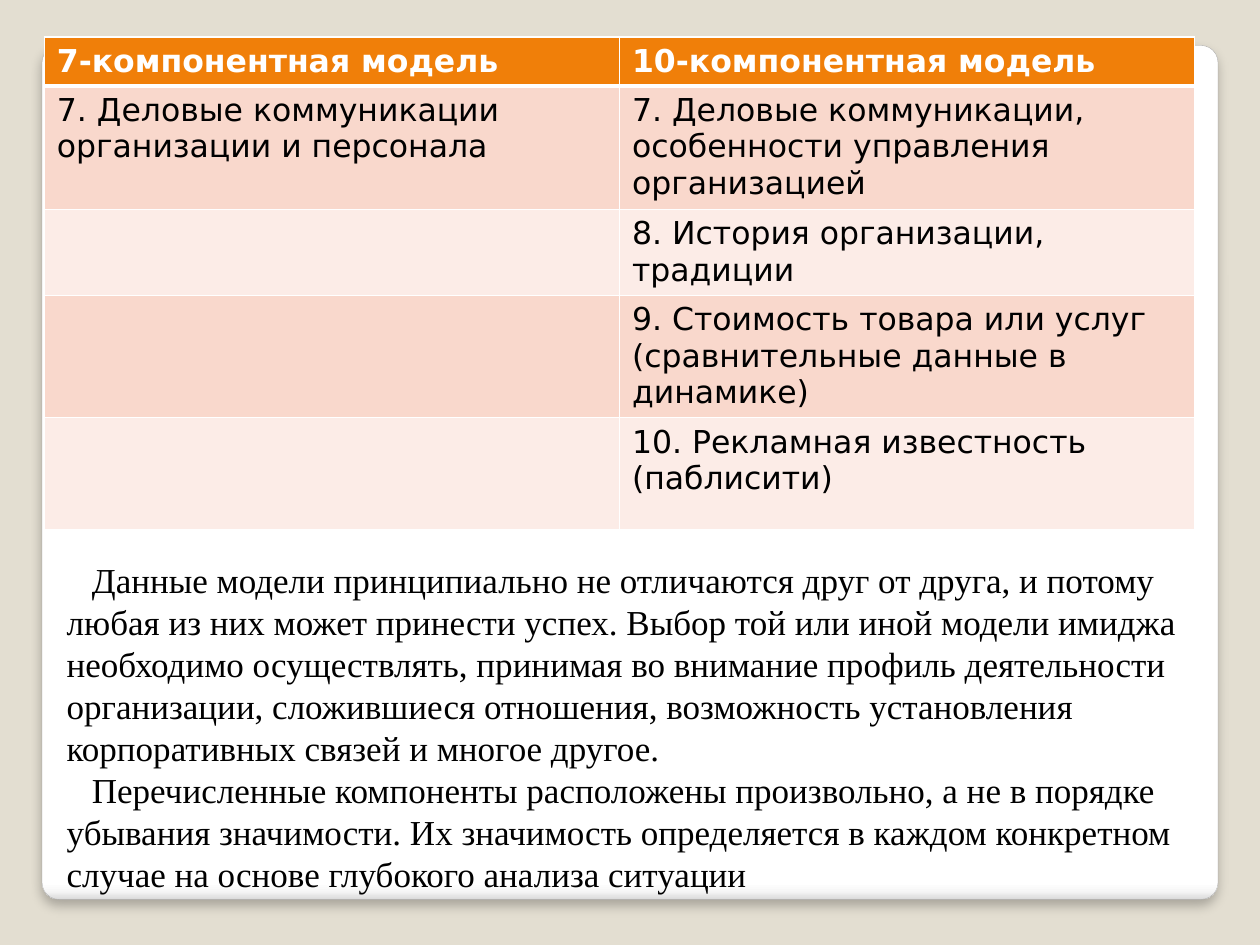
from lxml import etree
from pptx import Presentation
from pptx.dml.color import RGBColor
from pptx.enum.shapes import MSO_SHAPE
from pptx.enum.text import MSO_AUTO_SIZE
from pptx.oxml import parse_xml
from pptx.oxml.ns import nsdecls, qn
from pptx.util import Pt

ROUND = MSO_SHAPE.ROUNDED_RECTANGLE
GROW = MSO_AUTO_SIZE.SHAPE_TO_FIT_TEXT

# Content
ROWS = [
    ("7-компонентная модель", "10-компонентная модель"),
    ("7. Деловые коммуникации организации и персонала",
     "7. Деловые коммуникации, особенности управления организацией"),
    ("", "8. История организации, традиции"),
    ("", "9. Стоимость товара или услуг (сравнительные данные в динамике)"),
    ("", "10. Рекламная известность (паблисити)"),
]
NOTES = [
    "Данные модели принципиально не отличаются друг от друга, и потому любая "
    "из них может принести успех. Выбор той или иной модели имиджа необходимо "
    "осуществлять, принимая во внимание профиль деятельности организации, "
    "сложившиеся отношения, возможность установления корпоративных связей и "
    "многое другое.",
    "Перечисленные компоненты расположены произвольно, а не в порядке убывания "
    "значимости. Их значимость определяется в каждом конкретном случае на "
    "основе глубокого анализа ситуации",
]

# Theme and layout, in points
THEME = {
    "back": "E3DED1", "edge": "A4A4A4", "head": "F07F09",
    "bands": ("F9D8CC", "FCECE7"), "rule": "FFFFFF",
    "light": "FFFFFF", "dark": "000000",
    "sans": "DejaVu Sans", "serif": "Times New Roman",
    "cell": 18, "note": 20,
    "panel": [(0, "FFFFFF"), (98, "FFFFFF"), (99, "F7F7F7"), (100, "DADADA")],
}
PANEL = (24, 26, 672, 488)
TABLE = (25.3, 21, 657.4, 278)
HEIGHTS = (27.6, 70.6, 47.8, 68.4, 64)
NOTE = (31, 315.5, 652.5, 201)


def color(code):
    return RGBColor.from_string(code)


def place(box):
    return [Pt(v) for v in box]


def write(frame, texts, font, size, ink, bold=False, indent=0):
    for i, text in enumerate(texts):
        para = frame.paragraphs[0] if i == 0 else frame.add_paragraph()
        if indent:
            props = para._p.get_or_add_pPr()
            props.set("marL", "0")
            props.set("indent", str(Pt(indent)))
        run = para.add_run()
        run.text = text
        run.font.name, run.font.size = font, Pt(size)
        run.font.bold, run.font.color.rgb = bold, color(ink)


def border(cell, **widths):
    props = cell._tc.get_or_add_tcPr()
    for i, side in enumerate("LRTB"):
        props.insert(i, parse_xml(
            f'<a:ln{side} {nsdecls("a")} w="{Pt(widths.get(side, 1))}">'
            f'<a:solidFill><a:srgbClr val="{THEME["rule"]}"/></a:solidFill>'
            f'</a:ln{side}>'))


def add_panel(slide):
    panel = slide.shapes.add_shape(ROUND, *place(PANEL))
    panel.adjustments[0] = 0.02
    panel.line.color.rgb = color(THEME["edge"])
    panel.line.width = Pt(0.16)
    # Four gradient stops, top to bottom
    panel.fill.gradient()
    panel.fill.gradient_angle = 270
    stops = panel._element.spPr.find(".//" + qn("a:gsLst"))
    for old in list(stops):
        stops.remove(old)
    for pos, code in THEME["panel"]:
        stop = etree.SubElement(stops, qn("a:gs"), pos=str(pos * 1000))
        etree.SubElement(stop, qn("a:srgbClr"), val=code)
    # Soft shadow below
    panel.shadow.inherit = False
    glow = panel._element.spPr.find(qn("a:effectLst"))
    glow.append(parse_xml(
        f'<a:outerShdw {nsdecls("a")} blurRad="{Pt(6)}" dist="{Pt(4)}" '
        'dir="5400000" algn="t" rotWithShape="0"><a:srgbClr val="000000">'
        '<a:alpha val="25000"/></a:srgbClr></a:outerShdw>'))


def add_table(slide):
    cols = len(ROWS[0])
    table = slide.shapes.add_table(len(ROWS), cols, *place(TABLE)).table
    for col in table.columns:
        col.width = Pt(TABLE[2] / cols)
    for r, (texts, height) in enumerate(zip(ROWS, HEIGHTS)):
        table.rows[r].height = Pt(height)
        head = r == 0
        for c, text in enumerate(texts):
            cell = table.cell(r, c)
            cell.fill.solid()
            cell.fill.fore_color.rgb = color(
                THEME["head"] if head else THEME["bands"][(r - 1) % 2])
            border(cell, B=3 if head else 1, T=3 if r == 1 else 1)
            if text:
                write(cell.text_frame, [text], THEME["sans"], THEME["cell"],
                      THEME["light" if head else "dark"], bold=head)


def add_note(slide):
    frame = slide.shapes.add_textbox(*place(NOTE)).text_frame
    frame.word_wrap = True
    frame.auto_size = GROW
    write(frame, NOTES, THEME["serif"], THEME["note"], THEME["dark"],
          indent=14.4)


def main():
    deck = Presentation()
    deck.slide_width, deck.slide_height = Pt(720), Pt(540)
    slide = deck.slides.add_slide(deck.slide_layouts[6])
    slide.background.fill.solid()
    slide.background.fill.fore_color.rgb = color(THEME["back"])
    add_panel(slide)
    add_table(slide)
    add_note(slide)
    deck.save("out.pptx")


if __name__ == "__main__":
    main()
